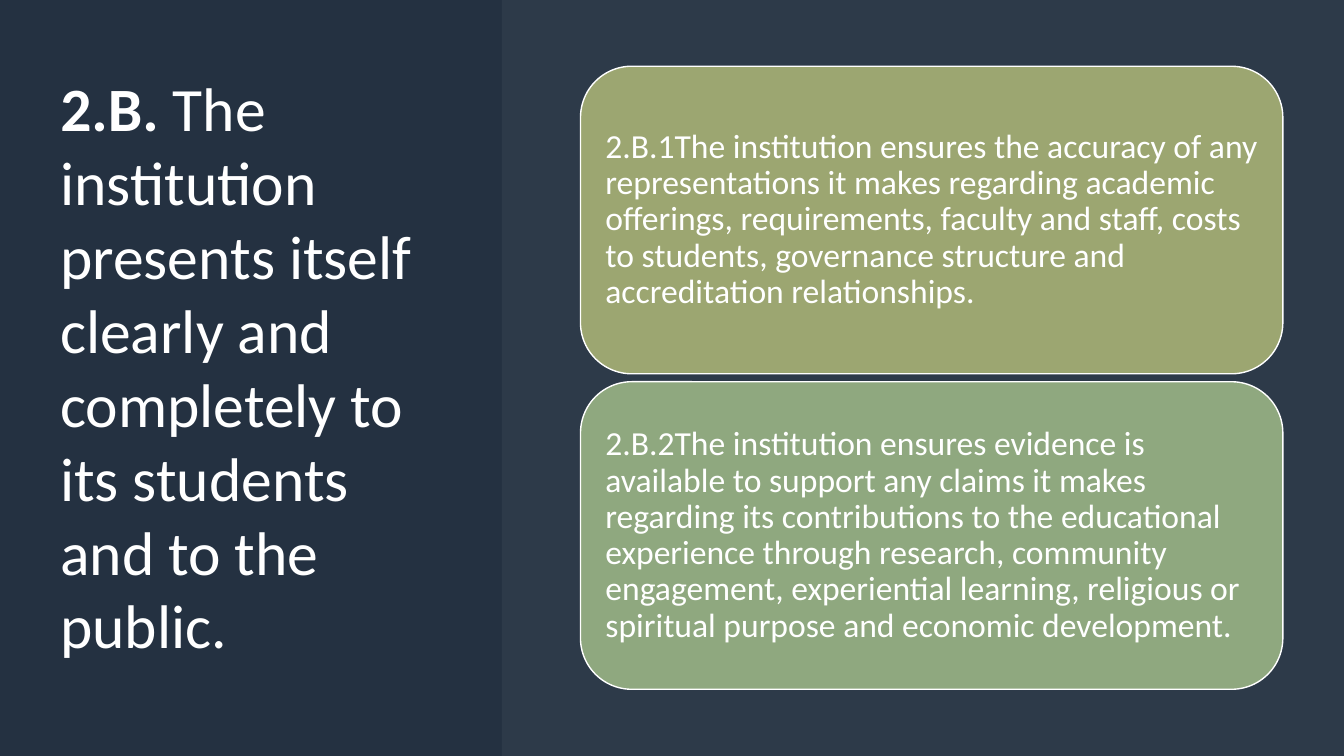
from lxml.etree import SubElement
from pptx import Presentation
from pptx.dml.color import RGBColor
from pptx.enum.shapes import MSO_SHAPE as SHAPE
from pptx.enum.text import MSO_ANCHOR as ANCHOR, PP_ALIGN as ALIGN
from pptx.oxml.ns import qn
from pptx.util import Cm, Pt

NAVY, MIST, WHITE = "243141", "E5EAF0", "FFFFFF"
TITLE = [
    ("2.B.", True),
    ("\u00a0The institution presents itself clearly and completely to its students and to the public.", False),
]
CARDS = [
    ("9CA671", "2.B.1The institution ensures the accuracy of any representations it makes regarding "
               "academic offerings, requirements, faculty and staff, costs to students, governance "
               "structure and accreditation relationships."),
    ("8FA87F", "2.B.2The institution ensures evidence is available to support any claims it makes "
               "regarding its contributions to the educational experience through research, community "
               "engagement, experiential learning, religious or spiritual purpose and economic "
               "development."),
]
SLIDE_W, SLIDE_H = 33.87, 19.05
PANEL_X = 12.65
TITLE_BOX = (1.52, 1.52, 9.91, 15.39)
CARD_X, CARD_Y, CARD_W, CARD_H, CARD_GAP = 14.63, 1.67, 17.7, 7.75, 0.2


def paint(fmt, color):
    fmt.solid()
    fmt.fore_color.rgb = RGBColor.from_string(color)


def add_box(s, kind, box, color):
    sp = s.shapes.add_shape(kind, *map(Cm, box))
    sp.shadow.inherit = False
    paint(sp.fill, color)
    return sp


def write(sp, runs, size, inset, spacing):
    tf = sp.text_frame
    margins = {f"margin_{side}": Cm(inset) for side in ("left", "right", "top", "bottom")}
    for name, value in {"word_wrap": True, "vertical_anchor": ANCHOR.MIDDLE, **margins}.items():
        setattr(tf, name, value)
    p = tf.paragraphs[0]
    p.alignment, p.line_spacing = ALIGN.LEFT, spacing
    for text, bold in runs:
        r = p.add_run()
        r.text = text
        for name, value in {"name": "Calibri", "size": Pt(size), "bold": bold}.items():
            setattr(r.font, name, value)
        paint(r.font.fill, WHITE)


prs = Presentation()
prs.slide_width, prs.slide_height = Cm(SLIDE_W), Cm(SLIDE_H)
s = prs.slides.add_slide(prs.slide_layouts[6])
paint(s.background.fill, NAVY)

title = s.shapes.add_textbox(*map(Cm, TITLE_BOX))
write(title, TITLE, 44, 0, 1.0)

panel = add_box(s, SHAPE.RECTANGLE, (PANEL_X, 0, SLIDE_W - PANEL_X, SLIDE_H), MIST)
panel.line.fill.background()
tint = panel.fill._xPr.find(qn("a:solidFill"))[0]
SubElement(tint, qn("a:alpha")).set("val", "5000")

for i, (color, text) in enumerate(CARDS):
    y = CARD_Y + i * (CARD_H + CARD_GAP)
    card = add_box(s, SHAPE.ROUNDED_RECTANGLE, (CARD_X, y, CARD_W, CARD_H), color)
    paint(card.line.fill, WHITE)
    card.line.width = Pt(1)
    write(card, [(text, False)], 24, 0.25, 0.9)

prs.save("out.pptx")
